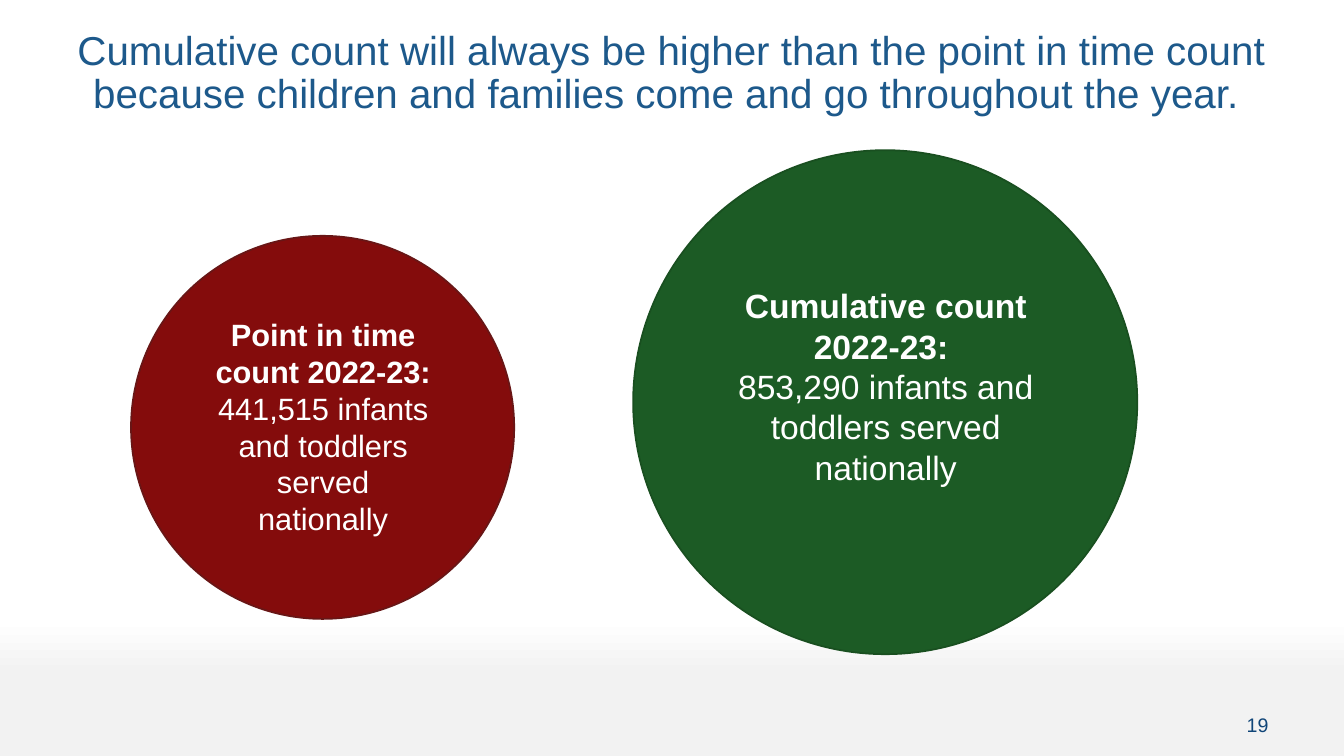
from pptx import Presentation
from pptx.dml.color import RGBColor
from pptx.enum.shapes import MSO_SHAPE as Shape
from pptx.enum.text import MSO_ANCHOR as Anchor, MSO_AUTO_SIZE as Fit, PP_ALIGN as Align
from pptx.util import Inches, Pt

HEADLINE = ("Cumulative count will always be higher than the point in time count "
            "because children and families come and go throughout the year. ")
PAGE_NUMBER = "19"
BACKDROP = [(0.82, "FFFFFF"), (0.89, "F2F2F2")]
COUNTS = [
    {"center": (3.2, 4.24), "diameter": 3.8, "fill": "840C0C", "line": "681616",
     "label": (1.98, 3.08, 2.45, 2.32), "size": 22,
     "paragraphs": [[("Point in time count 2022-23: ", True),
                     ("441,515 infants and toddlers served nationally", False)]]},
    {"center": (8.78, 3.99), "diameter": 5, "fill": "1C5B25", "line": "194F20",
     "label": (7.21, 2.78, 3.15, 2.42), "size": 24,
     "paragraphs": [[("Cumulative count 2022-23: ", True)],
                    [("853,290 infants and toddlers served nationally", False)]]},
]


def color(value):
    return RGBColor.from_string(value)


def apply(target, values):
    for name, value in values.items():
        setattr(target, name, value)


def place(left, top, width, height):
    return [Inches(length) for length in (left, top, width, height)]


def write(frame, paragraphs, size, ink, align, **frame_format):
    apply(frame, {"word_wrap": True, "auto_size": Fit.NONE, **frame_format})
    for index, runs in enumerate(paragraphs):
        paragraph = frame.add_paragraph() if index else frame.paragraphs[0]
        paragraph.alignment = align
        for words, bold in runs:
            run = paragraph.add_run()
            run.text = words
            apply(run.font, {"name": "Arial", "size": Pt(size), "bold": bold})
            run.font.color.rgb = color(ink)


def add_count(slide, count):
    diameter = count["diameter"]
    left, top = [middle - diameter / 2 for middle in count["center"]]
    circle = slide.shapes.add_shape(Shape.OVAL, *place(left, top, diameter, diameter))
    circle.shadow.inherit = False
    circle.fill.solid()
    circle.fill.fore_color.rgb = color(count["fill"])
    circle.line.color.rgb = color(count["line"])
    circle.line.width = Pt(1.25)
    label = slide.shapes.add_textbox(*place(*count["label"]))
    write(label.text_frame, count["paragraphs"], count["size"], "FFFFFF", Align.CENTER,
          auto_size=Fit.SHAPE_TO_FIT_TEXT)


def main():
    deck = Presentation()
    apply(deck, {"slide_width": Inches(13.33), "slide_height": Inches(7.5)})
    slide = deck.slides.add_slide(deck.slide_layouts[5])

    backdrop = slide.background.fill
    backdrop.gradient()
    backdrop.gradient_angle = 270
    for stop, (position, shade) in zip(backdrop.gradient_stops, BACKDROP):
        stop.position = position
        stop.color.rgb = color(shade)

    page = slide.shapes.add_textbox(*place(11.33, 6.91, 1.35, 0.55))
    write(page.text_frame, [[(PAGE_NUMBER, False)]], 14, "104578", Align.RIGHT,
          vertical_anchor=Anchor.MIDDLE)

    title = slide.shapes.title
    apply(title, dict(zip(("left", "top", "width", "height"), place(0.64, 0.25, 12.04, 1))))
    write(title.text_frame, [[(HEADLINE, False)]], 28.8, "1D598B", Align.CENTER,
          vertical_anchor=Anchor.TOP)
    title.text_frame.paragraphs[0].line_spacing = 0.9

    for count in COUNTS:
        add_count(slide, count)
    deck.save("out.pptx")


if __name__ == "__main__":
    main()
